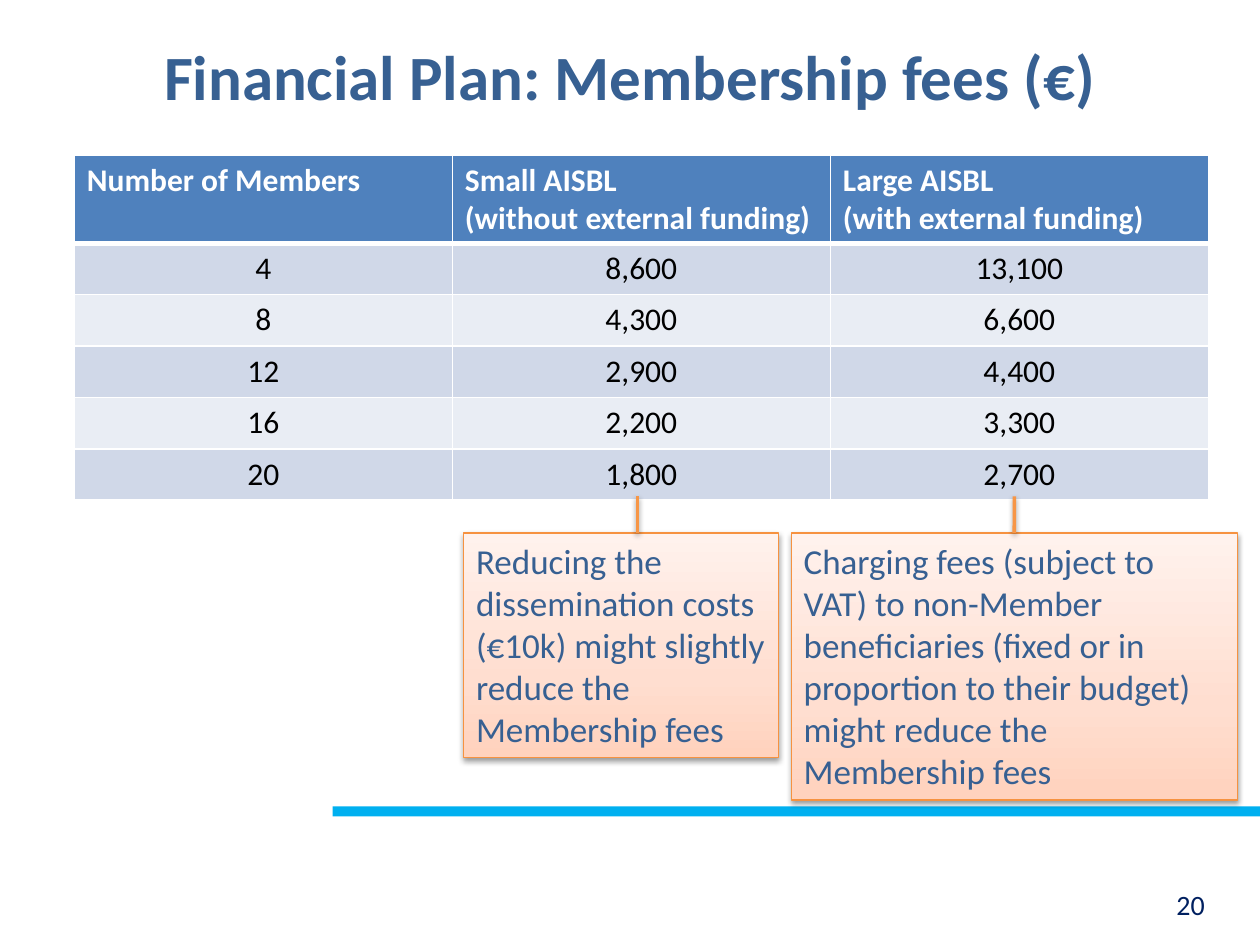
from copy import deepcopy
from dataclasses import dataclass

from lxml.etree import SubElement
from pptx import Presentation
from pptx.dml.color import RGBColor
from pptx.enum.shapes import MSO_CONNECTOR, MSO_SHAPE
from pptx.enum.text import MSO_ANCHOR, PP_ALIGN
from pptx.oxml.ns import qn
from pptx.shapes.autoshape import Shape
from pptx.slide import Slide
from pptx.table import _Cell
from pptx.text.text import TextFrame
from pptx.util import Emu, Inches, Pt

TOP_SIDE = 0


@dataclass(frozen=True)
class Theme:
    font: str = "Calibri"
    white: str = "FFFFFF"
    black: str = "000000"
    heading: str = "376092"
    page_number: str = "002060"
    accent_bar: str = "00B0F0"
    header_fill: str = "4F81BD"
    bands: tuple[str, str] = ("D0D8E8", "E9EDF4")
    stem: str = "F79646"
    note_line: str = "F69240"
    note_stops: tuple[tuple[float, str], ...] = ((0, "FFD2BD"), (0.35, "FFDED0"), (1, "FFF2ED"))
    title_size: int = 36
    note_size: int = 20
    table_size: int = 18
    number_size: int = 16


@dataclass(frozen=True)
class Area:
    """A rectangle in grid units; the slide has 100 columns and 75 rows."""
    column: float
    row: float
    columns: float
    rows: float

    def place(self) -> tuple[Emu, Emu, Emu, Emu]:
        return grid(self.column), grid(self.row), grid(self.columns), grid(self.rows)


@dataclass(frozen=True)
class Note:
    area: Area
    text: str
    stem_column: float
    centred_stem: bool


THEME = Theme()
SLIDE_COLUMNS, SLIDE_ROWS = 100, 75
TABLE_AREA = Area(5.9, 12.3, 90, 27.3)
HEADER_ROWS = 6.9
STEM_TOP = 39.4
HEADERS = (
    ("Number of Members",),
    ("Small AISBL", "(without external funding)"),
    ("Large AISBL", "(with external funding)"),
)
FEES = (
    ("4", "8,600", "13,100"),
    ("8", "4,300", "6,600"),
    ("12", "2,900", "4,400"),
    ("16", "2,200", "3,300"),
    ("20", "1,800", "2,700"),
)
NOTES = (
    Note(Area(62.8, 42.3, 35.4, 21.2),
         "Charging fees (subject to VAT) to non-Member beneficiaries (fixed or in "
         "proportion to their budget) might reduce the Membership fees", 80.5, True),
    Note(Area(36.8, 42.3, 25, 17.8),
         "Reducing the dissemination costs (€10k) might slightly reduce the "
         "Membership fees", 50.6, False),
)


def grid(units: float) -> Emu:
    return Inches(units / 10)


def color(value: str) -> RGBColor:
    return RGBColor.from_string(value)


def write(frame: TextFrame, lines: tuple[str, ...], size: int, ink: str,
          bold: bool = False, align: PP_ALIGN = PP_ALIGN.LEFT) -> None:
    frame.word_wrap = True
    for index, line in enumerate(lines):
        para = frame.add_paragraph() if index else frame.paragraphs[0]
        para.alignment = align
        span = para.add_run()
        span.text = line
        span.font.name = THEME.font
        span.font.size = Pt(size)
        span.font.bold = bold
        span.font.color.rgb = color(ink)


def add_label(page: Slide, area: Area, text: str, size: int, ink: str,
              bold: bool, align: PP_ALIGN) -> None:
    box = page.shapes.add_textbox(*area.place())
    box.text_frame.vertical_anchor = MSO_ANCHOR.MIDDLE
    write(box.text_frame, (text,), size, ink, bold, align)


def add_shadow(properties) -> None:
    """Append a soft downward shadow to a shape's or connector's spPr."""
    effects = properties.find(qn("a:effectLst"))
    if effects is None:
        effects = SubElement(properties, qn("a:effectLst"))
    shadow = SubElement(effects, qn("a:outerShdw"), blurRad="40000", dist="20000",
                        dir="5400000", rotWithShape="0")
    ink = SubElement(shadow, qn("a:srgbClr"), val=THEME.black)
    SubElement(ink, qn("a:alpha"), val="38000")


def add_bar(page: Slide, area: Area) -> None:
    bar = page.shapes.add_shape(MSO_SHAPE.RECTANGLE, *area.place())
    bar.shadow.inherit = False
    bar.fill.solid()
    bar.fill.fore_color.rgb = color(THEME.accent_bar)
    bar.line.fill.background()


def fill_gradient(box: Shape) -> None:
    box.fill.gradient()
    box.fill.gradient_angle = 90
    stop_list = box._element.spPr.find(".//" + qn("a:gsLst"))
    stop_list.append(deepcopy(stop_list[0]))
    for stop, (position, value) in zip(box.fill.gradient_stops, THEME.note_stops):
        stop.position = position
        stop.color.rgb = color(value)


def add_note(page: Slide, note: Note) -> None:
    box = page.shapes.add_shape(MSO_SHAPE.RECTANGLE, *note.area.place())
    box.shadow.inherit = False
    fill_gradient(box)
    box.line.color.rgb = color(THEME.note_line)
    box.line.width = Pt(0.75)
    add_shadow(box._element.spPr)
    box.text_frame.vertical_anchor = MSO_ANCHOR.TOP
    write(box.text_frame, (note.text,), THEME.note_size, THEME.heading)

    stem_left = grid(note.stem_column)
    stem = page.shapes.add_connector(MSO_CONNECTOR.STRAIGHT, stem_left, grid(STEM_TOP),
                                     stem_left, grid(note.area.row))
    if note.centred_stem:
        stem.end_connect(box, TOP_SIDE)
    stem.line.color.rgb = color(THEME.stem)
    stem.line.width = Pt(2)
    add_shadow(stem._element.spPr)


def style_cell(cell: _Cell, fill: str, top: float, bottom: float) -> None:
    """Give a cell its fill and white borders; top and bottom are in points."""
    properties = cell._tc.get_or_add_tcPr()
    for side, points in (("L", 1), ("R", 1), ("T", top), ("B", bottom)):
        border = SubElement(properties, qn(f"a:ln{side}"), w=str(Pt(points)))
        paint = SubElement(border, qn("a:solidFill"))
        SubElement(paint, qn("a:srgbClr"), val=THEME.white)
    cell.fill.solid()
    cell.fill.fore_color.rgb = color(fill)


def add_fee_table(page: Slide) -> None:
    table = page.shapes.add_table(len(FEES) + 1, len(HEADERS), *TABLE_AREA.place()).table
    table.horz_banding = False
    for column in table.columns:
        column.width = grid(TABLE_AREA.columns / len(HEADERS))
    body_height = grid((TABLE_AREA.rows - HEADER_ROWS) / len(FEES))
    for index, row in enumerate(table.rows):
        row.height = body_height if index else grid(HEADER_ROWS)
    for index, lines in enumerate(HEADERS):
        cell = table.cell(0, index)
        style_cell(cell, THEME.header_fill, 1, 3)
        write(cell.text_frame, lines, THEME.table_size, THEME.white, bold=True)
    for row_index, values in enumerate(FEES):
        for index, value in enumerate(values):
            cell = table.cell(row_index + 1, index)
            style_cell(cell, THEME.bands[row_index % 2], 1 if row_index else 3, 1)
            write(cell.text_frame, (value,), THEME.table_size, THEME.black,
                  align=PP_ALIGN.CENTER)


def main() -> None:
    deck = Presentation()
    deck.slide_width, deck.slide_height = grid(SLIDE_COLUMNS), grid(SLIDE_ROWS)
    page = deck.slides.add_slide(deck.slide_layouts[6])
    add_bar(page, Area(26.4, 64, SLIDE_COLUMNS - 26.4, 0.8))
    add_label(page, Area(73.3, 69.8, 23.3, 4), "20", THEME.number_size,
              THEME.page_number, False, PP_ALIGN.RIGHT)
    add_label(page, Area(5, -0.3, 90, 12.5), "Financial Plan: Membership fees (€)",
              THEME.title_size, THEME.heading, True, PP_ALIGN.CENTER)
    add_fee_table(page)
    for note in NOTES:
        add_note(page, note)
    deck.save("out.pptx")


if __name__ == "__main__":
    main()
